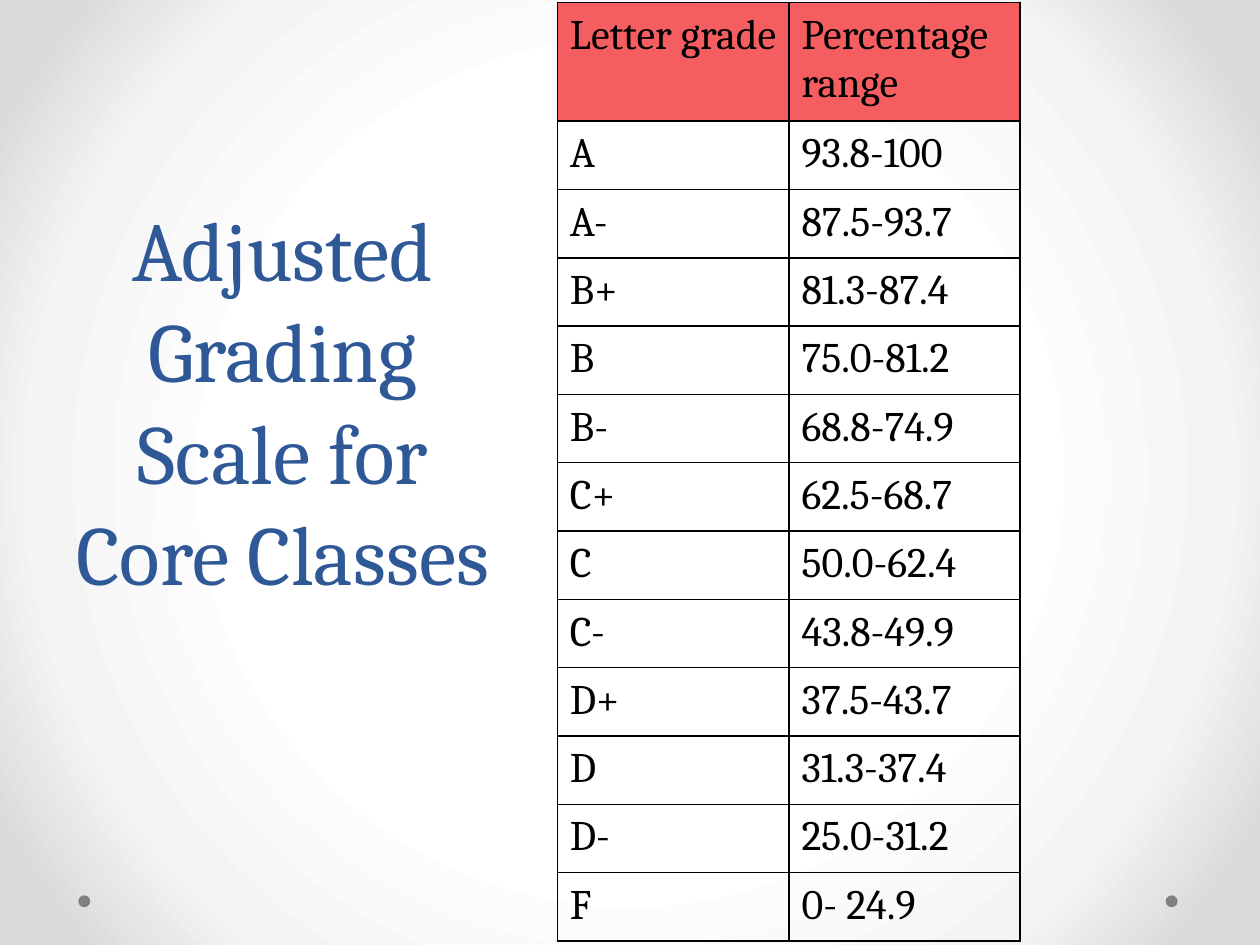
from lxml import etree
from pptx import Presentation
from pptx.dml.color import RGBColor
from pptx.enum.shapes import MSO_SHAPE
from pptx.enum.text import MSO_ANCHOR, PP_ALIGN
from pptx.oxml.ns import qn
from pptx.util import Cm, Pt

OVAL = MSO_SHAPE.OVAL
TOP = MSO_ANCHOR.TOP
CENTER = PP_ALIGN.CENTER
LEFT = PP_ALIGN.LEFT

COLORS = {
    "title": "2F5897",
    "text": "000000",
    "header": "F55E61",
    "border": "000000",
    "dot": "808080",
}
BACKGROUND_STOPS = [(50, "FFFFFF"), (76, "F4F4F4"), (92, "DADADA")]
FONT = "Cambria"
TITLE_FORMAT = {"name": FONT, "size": Pt(48), "bold": False}
CELL_FORMAT = {"name": FONT, "size": Pt(24), "bold": False}
TITLE_MARGINS = {
    "margin_left": Cm(0.25),
    "margin_right": Cm(0.25),
    "margin_top": Cm(0.25),
    "margin_bottom": Cm(0.25),
}
CELL_MARGINS = {
    "margin_left": Cm(0.25),
    "margin_right": Cm(0.25),
    "margin_top": Cm(0.18),
    "margin_bottom": Cm(0.18),
}
GRADES = [
    ("Letter grade", "Percentage range"),
    ("A", "93.8-100"),
    ("A-", "87.5-93.7"),
    ("B+", "81.3-87.4"),
    ("B", "75.0-81.2"),
    ("B-", "68.8-74.9"),
    ("C+", "62.5-68.7"),
    ("C", "50.0-62.4"),
    ("C-", "43.8-49.9"),
    ("D+", "37.5-43.7"),
    ("D", "31.3-37.4"),
    ("D-", "25.0-31.2"),
    ("F", "0- 24.9"),
]
TABLE_HEIGHT = 18.62
HEADER_HEIGHT = 2.36
COLUMN_WIDTHS = [4.67, 4.65]


def color(name):
    return RGBColor.from_string(COLORS[name])


def apply_format(target, values):
    for key, value in values.items():
        setattr(target, key, value)


def write_text(frame, text, font_format, color_name, alignment):
    para = frame.paragraphs[0]
    para.alignment = alignment
    span = para.add_run()
    span.text = text
    apply_format(span.font, font_format)
    span.font.color.rgb = color(color_name)
    return para


def paint_background(slide):
    fill = slide.background.fill
    fill.gradient()
    gradient = slide.background._cSld.find(".//" + qn("a:gradFill"))
    for child in list(gradient):
        gradient.remove(child)
    stops = etree.SubElement(gradient, qn("a:gsLst"))
    for position, value in BACKGROUND_STOPS:
        stop = etree.SubElement(stops, qn("a:gs"), pos=str(position * 1000))
        etree.SubElement(stop, qn("a:srgbClr"), val=value)
    shade = etree.SubElement(gradient, qn("a:path"), path="circle")
    sides = dict.fromkeys("ltrb", "50000")
    etree.SubElement(shade, qn("a:fillToRect"), sides)


def add_dot(slide, left):
    dot = slide.shapes.add_shape(OVAL, Cm(left), Cm(18.05), Cm(0.24), Cm(0.24))
    dot.shadow.inherit = False
    dot.fill.solid()
    dot.fill.fore_color.rgb = color("dot")
    dot.line.fill.background()


def add_title(slide, text):
    box = slide.shapes.add_textbox(Cm(0.91), Cm(3.71), Cm(9.58), Cm(11.25))
    frame = box.text_frame
    frame.word_wrap = True
    frame.vertical_anchor = TOP
    apply_format(frame, TITLE_MARGINS)
    para = write_text(frame, text, TITLE_FORMAT, "title", CENTER)
    para.line_spacing = Pt(58)


def add_borders(cell):
    properties = cell._tc.get_or_add_tcPr()
    for side in ("a:lnL", "a:lnR", "a:lnT", "a:lnB"):
        line = etree.SubElement(properties, qn(side), w=str(Pt(1)))
        fill = etree.SubElement(line, qn("a:solidFill"))
        etree.SubElement(fill, qn("a:srgbClr"), val=COLORS["border"])


def add_grade_table(slide):
    frame = slide.shapes.add_table(
        len(GRADES), len(COLUMN_WIDTHS),
        Cm(11.24), Cm(0.05), Cm(sum(COLUMN_WIDTHS)), Cm(TABLE_HEIGHT),
    )
    table = frame.table
    apply_format(table, {"first_row": False, "horz_banding": False})
    for column, width in zip(table.columns, COLUMN_WIDTHS):
        column.width = Cm(width)
    body_height = (TABLE_HEIGHT - HEADER_HEIGHT) / (len(GRADES) - 1)
    for index, (row, texts) in enumerate(zip(table.rows, GRADES)):
        row.height = Cm(body_height if index else HEADER_HEIGHT)
        for cell, text in zip(row.cells, texts):
            apply_format(cell, CELL_MARGINS)
            write_text(cell.text_frame, text, CELL_FORMAT, "text", LEFT)
            add_borders(cell)
            if index:
                cell.fill.background()
            else:
                cell.fill.solid()
                cell.fill.fore_color.rgb = color("header")


def main():
    deck = Presentation()
    deck.slide_width = Cm(25.4)
    deck.slide_height = Cm(19.05)
    page = deck.slides.add_slide(deck.slide_layouts[6])
    paint_background(page)
    for left in (23.5, 1.58):
        add_dot(page, left)
    add_title(page, "Adjusted Grading Scale for Core Classes")
    add_grade_table(page)
    deck.save("out.pptx")


if __name__ == "__main__":
    main()
